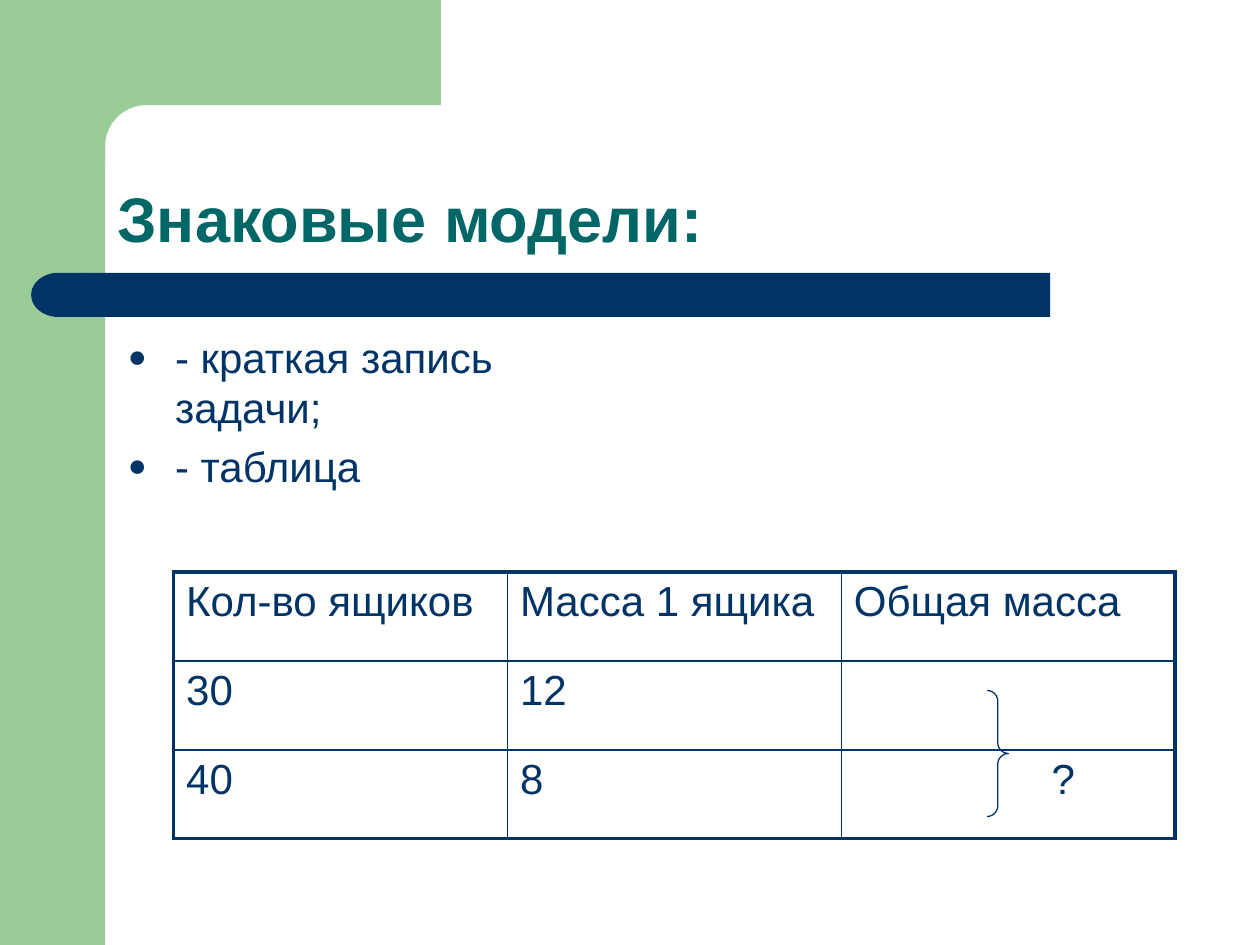
import math
from dataclasses import dataclass

import lxml.etree
import pptx
import pptx.dml.color
import pptx.enum.shapes
import pptx.enum.text
import pptx.oxml.ns
import pptx.util

Cm, Pt = pptx.util.Cm, pptx.util.Pt
Kind = pptx.enum.shapes.MSO_SHAPE
FONT = "Arial"
COLORS = {"green": "99CC99", "navy": "003366", "teal": "006666"}


@dataclass
class Block:
    kind: int
    left: float
    top: float
    width: float
    height: float
    color: str
    flip: bool = False


@dataclass
class Style:
    size: float
    color: str
    bold: bool = False


TITLE = Style(36, "teal", True)
BODY = Style(24, "navy")


def color(name: str) -> pptx.dml.color.RGBColor:
    return pptx.dml.color.RGBColor.from_string(COLORS[name])


def add_node(parent, tag: str, **attrs: str):
    return lxml.etree.SubElement(parent, pptx.oxml.ns.qn(tag), attrs)


def paint(shape, name: str) -> None:
    shape.shadow.inherit = False
    shape.fill.solid()
    shape.fill.fore_color.rgb = color(name)
    shape.line.fill.background()


def add_block(slide, block: Block) -> None:
    shape = slide.shapes.add_shape(
        block.kind, Cm(block.left), Cm(block.top), Cm(block.width), Cm(block.height))
    paint(shape, block.color)
    if block.flip:
        shape._element.spPr.xfrm.set("flipH", "1")


def add_corner(slide) -> None:
    """Top band whose inner corner is a quarter circle."""
    left, right, edge, low = 1.27, 8.89, 2.12, 3.25
    mid, radius, steps = 2.95, 0.83, 16
    turns = [math.pi / 2 * (1 + n / steps) for n in range(steps + 1)]
    arc = [(mid + radius * math.cos(t), mid - radius * math.sin(t)) for t in turns]
    points = [(right, 0), (right, edge), *arc, (edge, low), (left, low), (left, 0)]
    outline = [(Cm(x), Cm(y)) for x, y in points]
    build = slide.shapes.build_freeform(*outline[0])
    build.add_line_segments(outline[1:], close=True)
    paint(build.convert_to_shape(), "green")


def add_run(para, text: str, style: Style) -> None:
    run = para.add_run()
    run.text = text
    run.font.name = FONT
    run.font.size = Pt(style.size)
    run.font.bold = style.bold
    run.font.color.rgb = color(style.color)


def add_box(slide, left: float, top: float, width: float, height: float):
    frame = slide.shapes.add_textbox(Cm(left), Cm(top), Cm(width), Cm(height)).text_frame
    frame.word_wrap = True
    return frame


def add_bullet(para) -> None:
    props = para._p.get_or_add_pPr()
    props.set("marL", str(Cm(0.95)))
    props.set("indent", str(Cm(-0.95)))
    add_node(add_node(props, "a:buClr"), "a:srgbClr", val=COLORS["navy"])
    add_node(props, "a:buSzPct", val="75000")
    add_node(props, "a:buFont", typeface=FONT)
    add_node(props, "a:buChar", char="●")


def add_edge(cell, side: str, width: float) -> None:
    line = add_node(cell._tc.get_or_add_tcPr(), f"a:ln{side}", w=str(Pt(width)))
    add_node(add_node(line, "a:solidFill"), "a:srgbClr", val=COLORS["navy"])


def add_grid(slide, rows: list[list[str]]) -> None:
    count, wide = len(rows), len(rows[0])
    table = slide.shapes.add_table(
        count, wide, Cm(3.5), Cm(11.53), Cm(20.19), Cm(5.38)).table
    table.first_row = table.horz_banding = False
    for r, row in enumerate(rows):
        for c, text in enumerate(row):
            cell = table.cell(r, c)
            outer = {"L": c == 0, "R": c == wide - 1, "T": r == 0, "B": r == count - 1}
            for side, thick in outer.items():
                add_edge(cell, side, 2.25 if thick else 1)
            cell.fill.background()
            if text:
                add_run(cell.text_frame.paragraphs[0], text, BODY)
    # The unknown stands to the right of the brace
    table.cell(count - 1, wide - 1).margin_left = Cm(4.24)


def main() -> None:
    deck = pptx.Presentation()
    deck.slide_width, deck.slide_height = Cm(25.4), Cm(19.05)
    slide = deck.slides.add_slide(deck.slide_layouts[6])

    # Backdrop and rule under the title
    add_block(slide, Block(Kind.RECTANGLE, 0, 0, 2.12, 19.05, "green"))
    add_corner(slide)
    add_block(slide, Block(Kind.RECTANGLE, 1.7, 5.5, 19.47, 0.89, "navy"))
    add_block(slide, Block(Kind.FLOWCHART_DELAY, 0.63, 5.5, 1.09, 0.89, "navy", True))

    # Title
    frame = add_box(slide, 2.12, 2.12, 22.01, 3.17)
    frame.vertical_anchor = pptx.enum.text.MSO_ANCHOR.BOTTOM
    frame.paragraphs[0].line_spacing = 0.9
    add_run(frame.paragraphs[0], "Знаковые модели:", TITLE)

    # Bullet list
    frame = add_box(slide, 2.33, 6.56, 10.46, 10.34)
    for n, text in enumerate(["- краткая запись задачи;", "- таблица"]):
        para = frame.add_paragraph() if n else frame.paragraphs[0]
        para.space_before = Pt(4.8)
        add_bullet(para)
        add_run(para, text, BODY)

    # Table of the task
    add_grid(slide, [
        ["Кол-во ящиков", "Масса 1 ящика", "Общая масса"],
        ["30", "12", ""],
        ["40", "8", "?"],
    ])

    # Brace joining the two lower rows
    brace = slide.shapes.add_shape(
        Kind.RIGHT_BRACE, Cm(19.9), Cm(13.92), Cm(0.43), Cm(2.54))
    brace.shadow.inherit = False
    brace.adjustments[0] = 0.5
    brace.fill.background()
    brace.line.color.rgb = color("navy")
    brace.line.width = Pt(0.75)

    deck.save("out.pptx")


if __name__ == "__main__":
    main()
